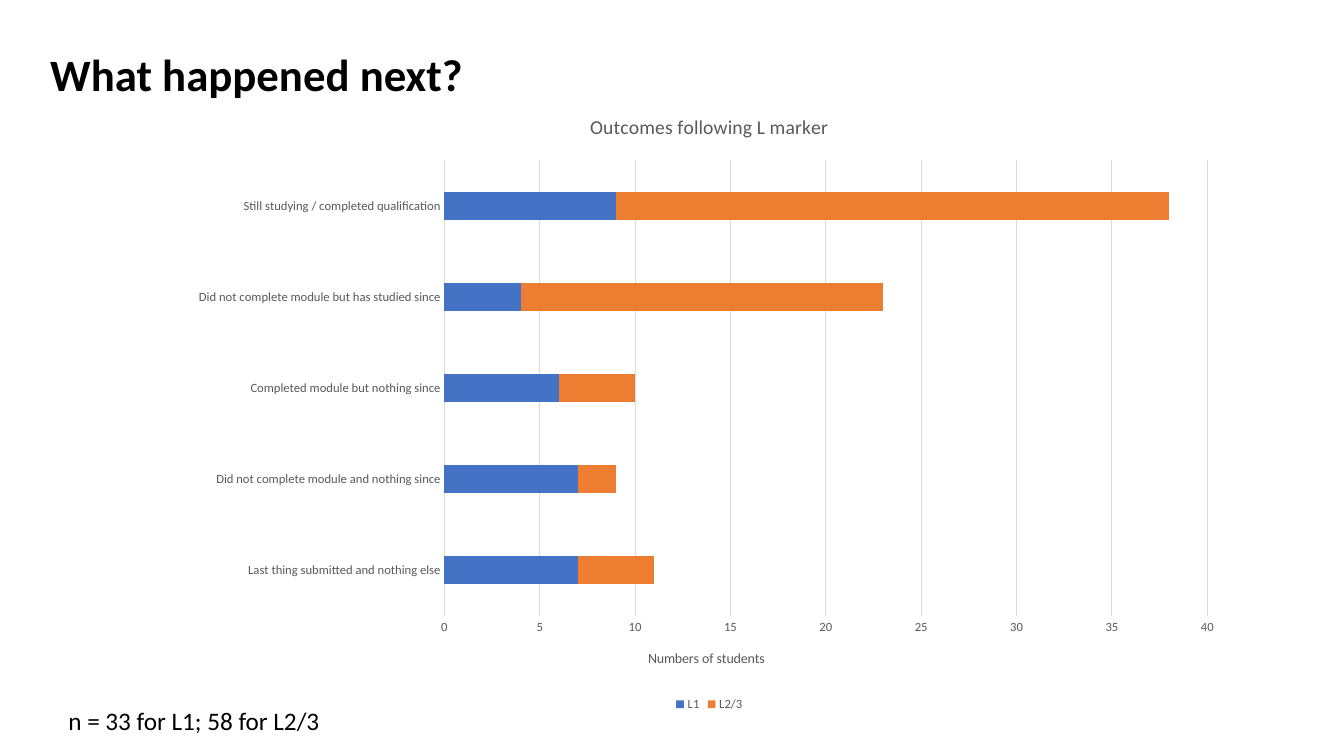
from lxml import etree
from pptx import Presentation
from pptx.chart.data import CategoryChartData
from pptx.dml.color import RGBColor
from pptx.enum.chart import XL_CHART_TYPE, XL_LEGEND_POSITION, XL_TICK_MARK
from pptx.enum.text import MSO_AUTO_SIZE
from pptx.oxml.ns import qn
from pptx.util import Inches, Pt

BAR_STACKED = XL_CHART_TYPE.BAR_STACKED
LEGEND_BOTTOM = XL_LEGEND_POSITION.BOTTOM
NO_TICK = XL_TICK_MARK.NONE
FIT_SHAPE = MSO_AUTO_SIZE.SHAPE_TO_FIT_TEXT

FONT = "Calibri"
COLORS = {
    "text": "000000",
    "label": "595959",
    "grid": "D9D9D9",
    "L1": "4472C4",
    "L2/3": "ED7D31",
}
CATEGORIES = [
    "Last thing submitted and nothing else",
    "Did not complete module and nothing since",
    "Completed module but nothing since",
    "Did not complete module but has studied since",
    "Still studying / completed qualification",
]
SERIES = {"L1": (7, 7, 6, 4, 9), "L2/3": (4, 2, 4, 19, 29)}
# Inner plot area as fractions of the chart frame
PLOT_LAYOUT = {"x": 0.25, "y": 0.11, "w": 0.72, "h": 0.73}


def rgb(name):
    return RGBColor.from_string(COLORS[name])


def style_font(font, size, color="label", bold=False):
    font.name = FONT
    font.size = Pt(size)
    font.bold = bold
    font.color.rgb = rgb(color)


def write_text(tf, text, **fmt):
    r = tf.paragraphs[0].add_run()
    r.text = text
    style_font(r.font, **fmt)


def add_text(s, text, left, top, width, height, **fmt):
    box = s.shapes.add_textbox(Inches(left), Inches(top), Inches(width), Inches(height))
    tf = box.text_frame
    tf.word_wrap = False
    tf.auto_size = FIT_SHAPE
    write_text(tf, text, **fmt)


def style_line(line):
    line.color.rgb = rgb("grid")
    line.width = Pt(0.75)


def style_axis(axis):
    axis.major_tick_mark = axis.minor_tick_mark = NO_TICK
    style_font(axis.tick_labels.font, 9)


def set_plot_layout(chart):
    plot_area = chart.plots[0]._element.getparent()
    for old in plot_area.findall(qn("c:layout")):
        plot_area.remove(old)
    layout = etree.Element(qn("c:layout"))
    plot_area.insert(0, layout)
    manual = etree.SubElement(layout, qn("c:manualLayout"))
    settings = {"layoutTarget": "inner", "xMode": "edge", "yMode": "edge", **PLOT_LAYOUT}
    for tag, value in settings.items():
        etree.SubElement(manual, qn(f"c:{tag}")).set("val", str(value))


def add_outcomes_chart(s, left, top, width, height):
    data = CategoryChartData()
    data.categories = CATEGORIES
    for name, values in SERIES.items():
        data.add_series(name, values)
    chart = s.shapes.add_chart(BAR_STACKED, Inches(left), Inches(top),
                               Inches(width), Inches(height), data).chart
    style_font(chart.font, 10, "text")
    write_text(chart.chart_title.text_frame, "Outcomes following L marker", size=14)
    chart.chart_title.include_in_layout = False

    # Bars
    plot = chart.plots[0]
    plot.gap_width, plot.overlap = 219, 100
    plot.vary_by_categories = False
    for series in plot.series:
        series.format.fill.solid()
        series.format.fill.fore_color.rgb = rgb(series.name)

    # Axes
    cat_axis, val_axis = chart.category_axis, chart.value_axis
    style_axis(cat_axis)
    style_axis(val_axis)
    style_line(cat_axis.format.line)
    val_axis.format.line.fill.background()
    val_axis.minimum_scale, val_axis.maximum_scale, val_axis.major_unit = 0, 40, 5
    val_axis.has_major_gridlines = True
    style_line(val_axis.major_gridlines.format.line)
    write_text(val_axis.axis_title.text_frame, "Numbers of students", size=10)

    # Legend
    chart.has_legend = True
    chart.legend.position = LEGEND_BOTTOM
    chart.legend.include_in_layout = False
    style_font(chart.legend.font, 9)
    set_plot_layout(chart)


def main():
    prs = Presentation()
    prs.slide_width, prs.slide_height = Inches(13.33), Inches(7.5)
    s = prs.slides.add_slide(prs.slide_layouts[6])
    add_outcomes_chart(s, 1.78, 0.91, 10.51, 6.19)
    add_text(s, "What happened next?", 0.4, 0.41, 4.33, 2.26,
             size=32, color="text", bold=True)
    add_text(s, "n = 33 for L1; 58 for L2/3", 0.58, 6.95, 2.73, 0.4,
             size=18, color="text")
    prs.save("out.pptx")


if __name__ == "__main__":
    main()
